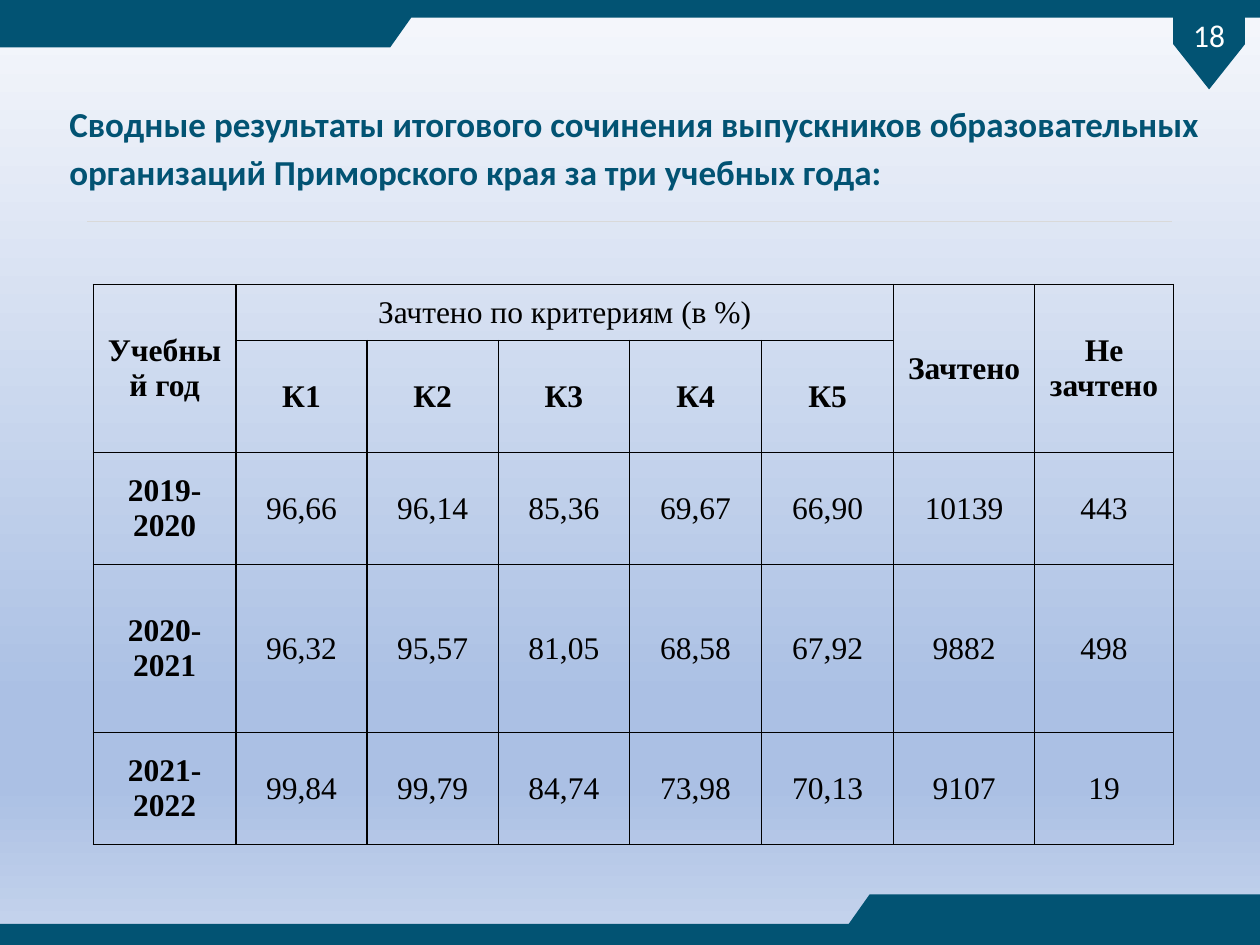
import copy

import lxml.etree
import pptx
import pptx.dml.color
import pptx.enum.shapes
import pptx.enum.text
import pptx.oxml.ns
import pptx.util

Pt = pptx.util.Pt
RGB = pptx.dml.color.RGBColor
qn = pptx.oxml.ns.qn
ANCHOR = pptx.enum.text.MSO_ANCHOR
CENTER = pptx.enum.text.PP_ALIGN.CENTER

TEAL = RGB(0x02, 0x53, 0x73)
WHITE = RGB(0xFF, 0xFF, 0xFF)
BLACK = RGB(0, 0, 0)
GREY = RGB(0xD9, 0xD9, 0xD9)
SKY = [
    (0, RGB(0xF6, 0xF8, 0xFC)),
    (0.74, RGB(0xAB, 0xC0, 0xE4)),
    (0.83, RGB(0xAB, 0xC0, 0xE4)),
    (1, RGB(0xC7, 0xD5, 0xED)),
]

WIDTH, HEIGHT = 720, 540
TITLE = (
    "Сводные результаты итогового сочинения выпускников образовательных "
    "организаций Приморского края за три учебных года:"
)
COLUMNS = [81.5, 75, 75, 75, 75.5, 75.5, 80.5, 79.5]
ROWS = [32, 64, 64, 96, 64]
RESULTS = [
    ["Учебный год", "Зачтено по критериям (в %)", "", "", "", "", "Зачтено", "Не зачтено"],
    ["", "К1", "К2", "К3", "К4", "К5", "", ""],
    ["2019-2020", "96,66", "96,14", "85,36", "69,67", "66,90", "10139", "443"],
    ["2020-2021", "96,32", "95,57", "81,05", "68,58", "67,92", "9882", "498"],
    ["2021-2022", "99,84", "99,79", "84,74", "73,98", "70,13", "9107", "19"],
]
MERGES = [((0, 0), (1, 0)), ((0, 1), (0, 5)), ((0, 6), (1, 6)), ((0, 7), (1, 7))]


def set_font(p, name, size, color, bold=False):
    """Format every run of a paragraph."""
    for r in p.runs:
        r.font.name = name
        r.font.size = Pt(size)
        r.font.bold = bold
        r.font.color.rgb = color


def paint(sp, color):
    """Give a shape a plain fill with no line or shadow."""
    sp.shadow.inherit = False
    sp.fill.solid()
    sp.fill.fore_color.rgb = color
    sp.line.fill.background()


def add_background(s):
    """Fill the background with a vertical gradient."""
    fill = s.background.fill
    fill.gradient()
    fill.gradient_angle = 270
    stops = s._element.find(".//" + qn("a:gsLst"))
    while len(stops) < len(SKY):
        stops.append(copy.deepcopy(stops[0]))
    for stop, (position, color) in zip(fill.gradient_stops, SKY):
        stop.position = position
        stop.color.rgb = color


def add_ribbon(s, x, y, w, h, rotation=0):
    """Draw a band that steps up to full height on its right side."""
    step = y + 0.6 * h
    builder = s.shapes.build_freeform(x + 0.69 * w, y, scale=Pt(1))
    builder.add_line_segments(
        [(x + w, y), (x + w, y + h), (x, y + h), (x, step), (x + 0.673 * w, step)]
    )
    sp = builder.convert_to_shape()
    sp.rotation = rotation
    paint(sp, TEAL)


def add_page_badge(s, x, y, w, h, number):
    """Draw the downward pointing tag with the page number."""
    left, top = x + (w - h) / 2, y + (h - w) / 2
    sp = s.shapes.add_shape(
        pptx.enum.shapes.MSO_SHAPE.PENTAGON, Pt(left), Pt(top), Pt(h), Pt(w)
    )
    sp.rotation = 90
    sp.adjustments[0] = 0.63
    paint(sp, TEAL)
    tf = sp.text_frame
    tf.text = number
    tf.margin_left = tf.margin_right = tf.margin_top = tf.margin_bottom = Pt(0.7)
    tf.vertical_anchor = ANCHOR.MIDDLE
    tf._txBody.bodyPr.set("vert", "vert270")
    p = tf.paragraphs[0]
    p.alignment = CENTER
    set_font(p, "Calibri", 18, WHITE)


def add_title(s, x, y, w, h):
    """Place and format the slide title."""
    sp = s.shapes.title
    sp.left, sp.top, sp.width, sp.height = Pt(x), Pt(y), Pt(w), Pt(h)
    tf = sp.text_frame
    tf.text = TITLE
    tf.word_wrap = True
    tf.auto_size = pptx.enum.text.MSO_AUTO_SIZE.NONE
    tf.vertical_anchor = ANCHOR.TOP
    p = tf.paragraphs[0]
    p.alignment = pptx.enum.text.PP_ALIGN.LEFT
    p.line_spacing = 1.14
    p.space_before = Pt(0)
    set_font(p, "Calibri", 20, TEAL, True)


def add_rule(s, x, y, w):
    """Draw the thin line under the title."""
    line = s.shapes.add_connector(
        pptx.enum.shapes.MSO_CONNECTOR.STRAIGHT, Pt(x), Pt(y), Pt(x + w), Pt(y)
    )
    line.line.color.rgb = GREY
    line.line.width = Pt(0.75)
    lxml.etree.SubElement(line._element.spPr, qn("a:effectLst"))


def add_borders(cell):
    """Outline a cell with thin black lines."""
    tcPr = cell._tc.get_or_add_tcPr()
    for i, side in enumerate(("a:lnL", "a:lnR", "a:lnT", "a:lnB")):
        ln = lxml.etree.Element(qn(side), w=str(Pt(1)))
        fill = lxml.etree.SubElement(ln, qn("a:solidFill"))
        lxml.etree.SubElement(fill, qn("a:srgbClr"), val=str(BLACK))
        tcPr.insert(i, ln)


def add_results(s, x, y):
    """Build the table of results by school year."""
    table = s.shapes.add_table(
        len(ROWS), len(COLUMNS), Pt(x), Pt(y), Pt(sum(COLUMNS)), Pt(sum(ROWS))
    ).table
    table.first_row = table.horz_banding = False
    for column, width in zip(table.columns, COLUMNS):
        column.width = Pt(width)
    for row, height in zip(table.rows, ROWS):
        row.height = Pt(height)
    for i, texts in enumerate(RESULTS):
        for j, text in enumerate(texts):
            cell = table.cell(i, j)
            cell.text = text
            cell.fill.background()
            cell.vertical_anchor = ANCHOR.MIDDLE
            cell.margin_left = cell.margin_right = Pt(5)
            cell.margin_top = cell.margin_bottom = 0
            p = cell.text_frame.paragraphs[0]
            p.alignment = CENTER
            bold = (i < 2 or j == 0) and (i, j) != (0, 1)
            set_font(p, "Times New Roman", 18, BLACK, bold)
            add_borders(cell)
    for first, last in MERGES:
        table.cell(*first).merge(table.cell(*last))


def main():
    """Build the slide and save it."""
    prs = pptx.Presentation()
    prs.slide_width, prs.slide_height = Pt(WIDTH), Pt(HEIGHT)
    s = prs.slides.add_slide(prs.slide_layouts[5])
    add_background(s)
    add_ribbon(s, 0, 511.2, WIDTH, 28.8)
    add_ribbon(s, 0, -2.2, WIDTH, 28.8, 180)
    add_page_badge(s, 670.4, 1.4, 41, 49.7, "18")
    add_title(s, 32.4, 51.5, 679, 66)
    add_rule(s, 50, 126.7, 620)
    add_results(s, 53.3, 162.7)
    prs.save("out.pptx")


if __name__ == "__main__":
    main()
